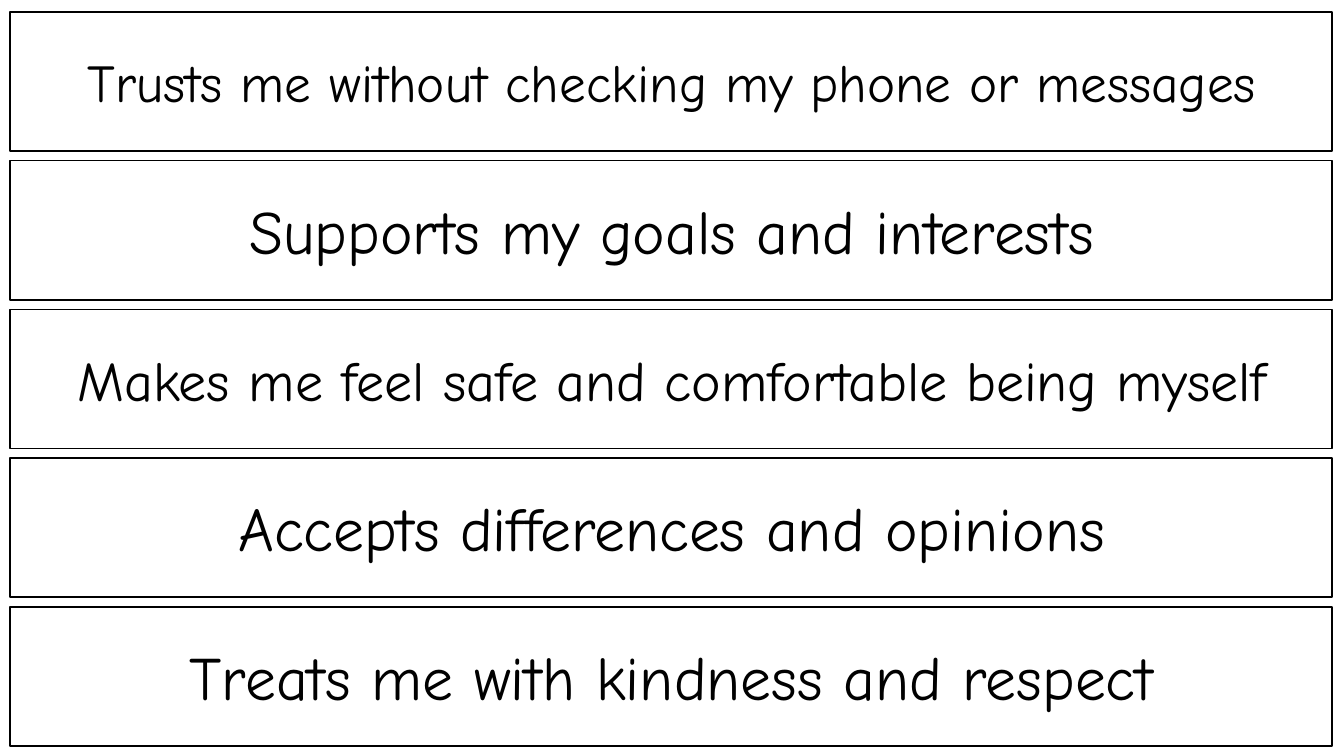
"""Build a slide of five stacked statement cards."""
from pptx import Presentation
from pptx.dml.color import RGBColor
from pptx.enum.shapes import MSO_SHAPE
from pptx.enum.text import MSO_ANCHOR, MSO_AUTO_SIZE, PP_ALIGN
from pptx.util import Inches, Pt

COLORS = {"card": "FFFFFF", "ink": "000000"}
FONT = "Comic Neue"
SLIDE_WIDTH, SLIDE_HEIGHT = 13.33, 7.5
CARD_LEFT, CARD_WIDTH, CARD_HEIGHT = 0.1, 13.11, 1.38
FIRST_TOP, LAST_TOP = 0.12, 6.02
TEXT_HEIGHTS = {38: 0.74, 40: 0.77, 44: 0.84}
STATEMENTS = [
    ("Trusts me without checking my phone or messages", 38, 13.11),
    ("Supports my goals and interests", 44, 13.11),
    ("Makes me feel safe and comfortable being myself", 40, 13.22),
    ("Accepts differences and opinions", 44, 13.11),
    ("Treats me with kindness and respect", 44, 11.43),
]


def write_text(frame, text, size, color, font=FONT, align=PP_ALIGN.CENTER):
    frame.word_wrap = True
    frame.auto_size = MSO_AUTO_SIZE.SHAPE_TO_FIT_TEXT
    frame.vertical_anchor = MSO_ANCHOR.TOP
    paragraph = frame.paragraphs[0]
    paragraph.alignment = align
    run = paragraph.add_run()
    run.text = text
    run.font.name = font
    run.font.size = Pt(size)
    run.font.color.rgb = RGBColor.from_string(COLORS[color])


class CardSlide:
    def __init__(self, presentation):
        self.slide = presentation.slides.add_slide(presentation.slide_layouts[6])
        self.line_width = Pt(1)

    def card(self, top):
        shape = self.slide.shapes.add_shape(
            MSO_SHAPE.RECTANGLE, Inches(CARD_LEFT), Inches(top),
            Inches(CARD_WIDTH), Inches(CARD_HEIGHT))
        shape.shadow.inherit = False
        shape.fill.solid()
        shape.fill.fore_color.rgb = RGBColor.from_string(COLORS["card"])
        shape.line.color.rgb = RGBColor.from_string(COLORS["ink"])
        shape.line.width = self.line_width

    def statement(self, text, size, width, card_top):
        height = TEXT_HEIGHTS[size]
        left = (SLIDE_WIDTH - width) / 2
        top = card_top + (CARD_HEIGHT - height) / 2
        box = self.slide.shapes.add_textbox(
            Inches(left), Inches(top), Inches(width), Inches(height))
        write_text(box.text_frame, text, size=size, color="ink")


def main():
    presentation = Presentation()
    presentation.slide_width = Inches(SLIDE_WIDTH)
    presentation.slide_height = Inches(SLIDE_HEIGHT)
    card_slide = CardSlide(presentation)
    pitch = (LAST_TOP - FIRST_TOP) / (len(STATEMENTS) - 1)
    for index, (text, size, width) in enumerate(STATEMENTS):
        top = FIRST_TOP + index * pitch
        card_slide.card(top)
        card_slide.statement(text, size, width, top)
    presentation.save("out.pptx")


if __name__ == "__main__":
    main()
